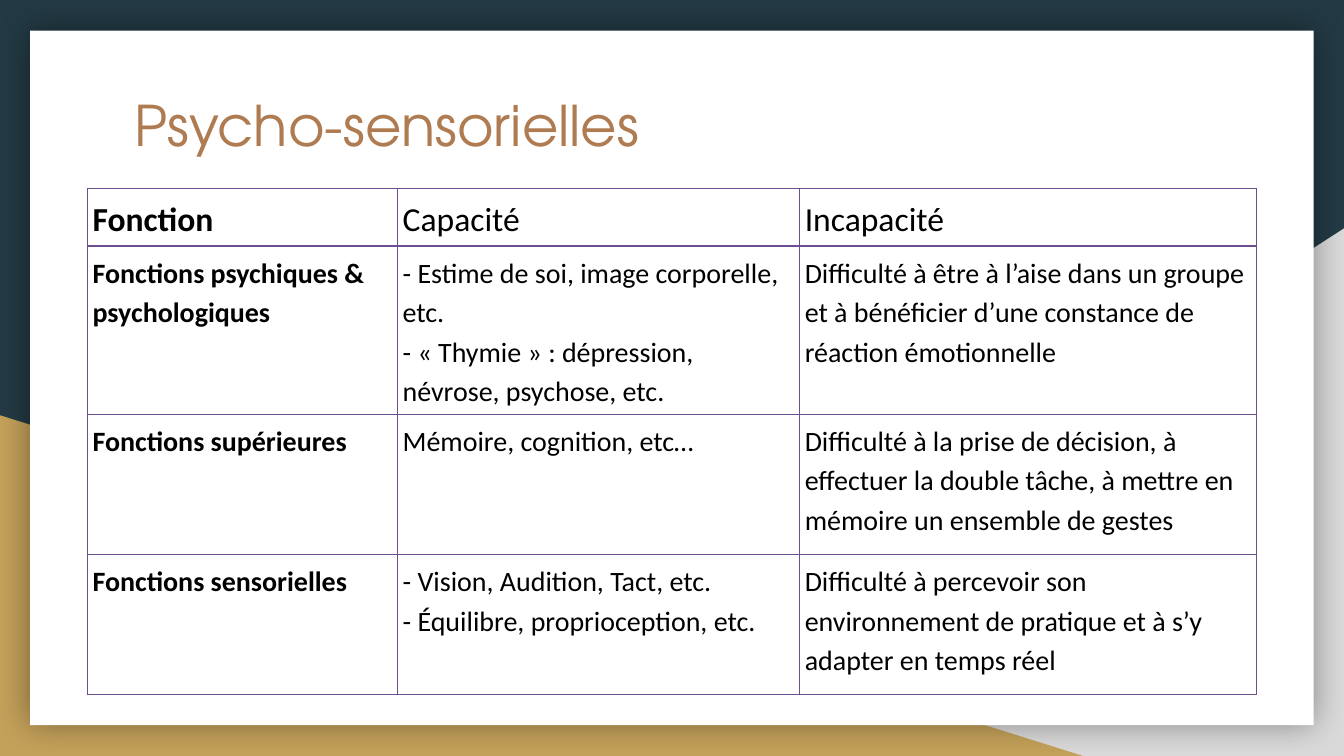
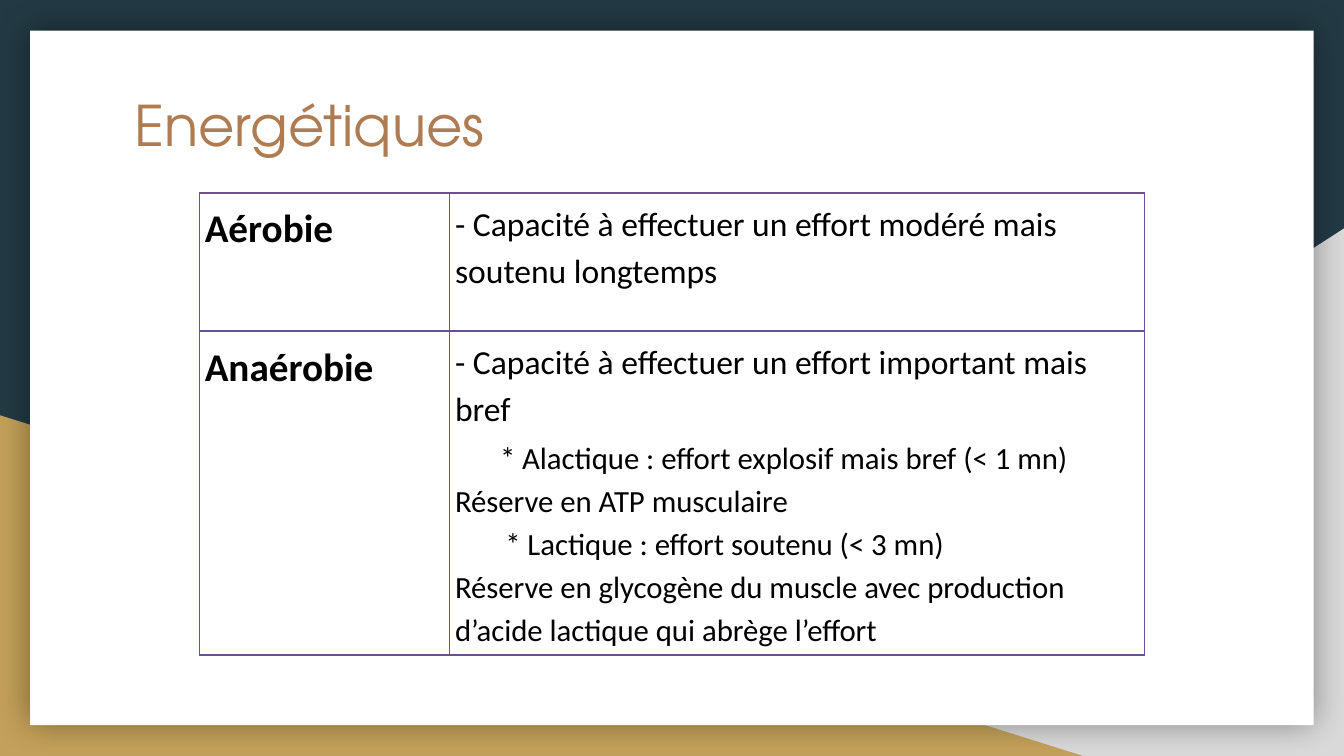
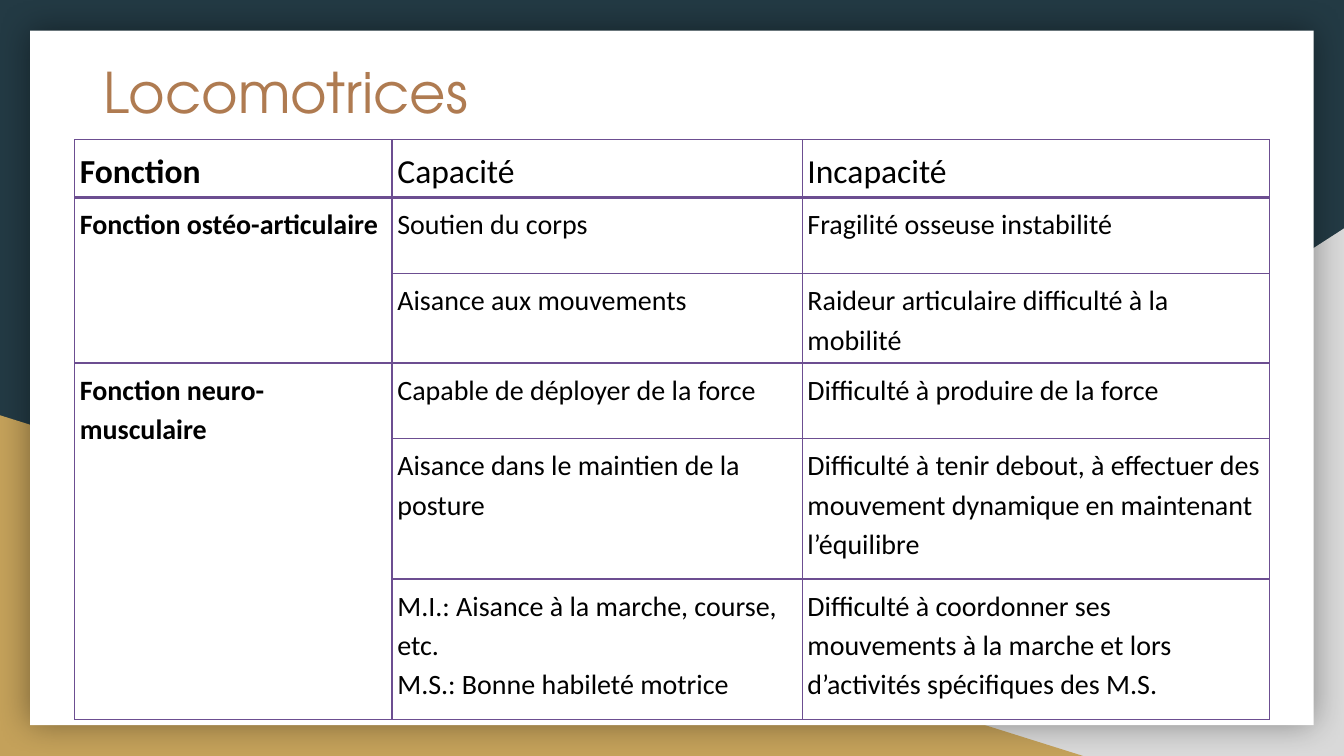
import lxml.etree
import pptx
import pptx.dml.color
import pptx.enum.shapes
import pptx.enum.text
import pptx.oxml
import pptx.oxml.ns
import pptx.util
from pptx.util import Cm

COLORS = {
    "night": "233A44",
    "grey": "D9D9D9",
    "gold": "C4A15A",
    "card": "FFFFFF",
    "title": "AF7B51",
    "text": "000000",
    "border": "6C4E91",
}
TITLE_FONT = "TeX Gyre Adventor"
BODY_FONT = "Calibri"
HEADINGS = [["Fonction"], ["Capacité"], ["Incapacité"]]

# A line of a cell is a text, or a text with its own format.
TOPICS = [
    {
        "title": "Psycho-sensorielles",
        "title_at": (2.29, 1.47),
        "table_at": (1.65, 3.56),
        "columns": (5.86, 7.6, 8.64),
        "heights": (1, 2.66, 2.65, 2.65),
        "size": 15,
        "merges": [],
        "rows": [
            HEADINGS,
            [
                ["Fonctions psychiques & psychologiques"],
                ["- Estime de soi, image corporelle, etc.",
                 "- « Thymie » : dépression, névrose, psychose, etc."],
                ["Difficulté à être à l’aise dans un groupe et à bénéficier "
                 "d’une constance de réaction émotionnelle"],
            ],
            [
                ["Fonctions supérieures"],
                ["Mémoire, cognition, etc…"],
                ["Difficulté à la prise de décision, à effectuer la double "
                 "tâche, à mettre en mémoire un ensemble de gestes"],
            ],
            [
                ["Fonctions sensorielles"],
                ["- Vision, Audition, Tact, etc.",
                 "- Équilibre, proprioception, etc."],
                ["Difficulté à percevoir son environnement de pratique et à "
                 "s’y adapter en temps réel"],
            ],
        ],
    },
    {
        "title": "Energétiques",
        "title_at": (2.29, 1.47),
        "table_at": (3.77, 3.65),
        "columns": (4.73, 13.13),
        "heights": (2.61, 5.21),
        "size": 18,
        "merges": [],
        "rows": [
            [
                [("Aérobie", {"size": 21})],
                ["- Capacité à effectuer un effort modéré mais soutenu longtemps"],
            ],
            [
                [("Anaérobie", {"size": 21})],
                [
                    "- Capacité à effectuer un effort important mais bref",
                    ("* Alactique : effort explosif mais bref (< 1 mn)",
                     {"size": 16.5, "indent": 0.85, "before": 2}),
                    ("Réserve en ATP musculaire", {"size": 16.5}),
                    ("* Lactique : effort soutenu (< 3 mn)",
                     {"size": 16.5, "indent": 0.95}),
                    ("Réserve en glycogène du muscle avec production d’acide "
                     "lactique qui abrège l’effort", {"size": 16.5}),
                ],
            ],
        ],
    },
    {
        "title": "Locomotrices",
        "title_at": (1.7, 0.84),
        "table_at": (1.41, 2.64),
        "columns": (6, 7.75, 8.83),
        "heights": (1, 1.44, 1.43, 1.43, 2.65, 2.65),
        "size": 15,
        "merges": [(1, 2), (3, 5)],
        "rows": [
            HEADINGS,
            [["Fonction ostéo-articulaire"], ["Soutien du corps"],
             ["Fragilité osseuse instabilité"]],
            [[], ["Aisance aux mouvements"],
             ["Raideur articulaire difficulté à la mobilité"]],
            [["Fonction neuro-musculaire"], ["Capable de déployer de la force"],
             ["Difficulté à produire de la force"]],
            [
                [],
                ["Aisance dans le maintien de la posture"],
                ["Difficulté à tenir debout, à effectuer des mouvement "
                 "dynamique en maintenant l’équilibre"],
            ],
            [
                [],
                ["M.I.: Aisance à la marche, course, etc.",
                 "M.S.: Bonne habileté motrice"],
                ["Difficulté à coordonner ses mouvements à la marche et lors "
                 "d’activités spécifiques des M.S."],
            ],
        ],
    },
]


def write(paragraph, text, size=15, bold=False, font=BODY_FONT, color="text",
          spacing=1.15, indent=0, before=0):
    paragraph.alignment = pptx.enum.text.PP_ALIGN.LEFT
    paragraph.line_spacing = spacing
    paragraph.space_before = pptx.util.Pt(before)
    if indent:
        paragraph._p.get_or_add_pPr().set("marL", str(Cm(indent)))
    run = paragraph.add_run()
    run.text = text
    run.font.size = pptx.util.Pt(size)
    run.font.bold = bold
    run.font.name = font
    run.font.color.rgb = pptx.dml.color.RGBColor.from_string(COLORS[color])


def draw_borders(cell, widths):
    """Line the left, right, top and bottom edges, with widths in points."""
    properties = cell._tc.get_or_add_tcPr()
    for position, (edge, width) in enumerate(zip("LRTB", widths)):
        line = pptx.oxml.parse_xml(
            f'<a:ln{edge} {pptx.oxml.ns.nsdecls("a")} w="{pptx.util.Pt(width)}">'
            f'<a:solidFill><a:srgbClr val="{COLORS["border"]}"/></a:solidFill>'
            f'</a:ln{edge}>')
        properties.insert(position, line)


presentation = pptx.Presentation()
presentation.slide_width = Cm(25.4)
presentation.slide_height = Cm(14.29)

# Shared backdrop, kept in the layout
layout = presentation.slide_layouts.get_by_name("Title Only")
layout.background.fill.solid()
layout.background.fill.fore_color.rgb = pptx.dml.color.RGBColor.from_string(COLORS["night"])
for placeholder in list(layout.placeholders)[1:]:
    layout.shapes.element.remove(placeholder.element)

slides = [presentation.slides.add_slide(layout) for topic in TOPICS]

TRIANGLE = pptx.enum.shapes.MSO_SHAPE.RIGHT_TRIANGLE
RECTANGLE = pptx.enum.shapes.MSO_SHAPE.RECTANGLE
backdrop = [
    ("grey", TRIANGLE, (9.96, 4.32, 15.44, 9.97)),
    ("gold", TRIANGLE, (0, 7.85, 20.47, 6.44)),
    ("card", RECTANGLE, (0.57, 0.58, 24.26, 13.13)),
]
for depth, (color, preset, box) in enumerate(backdrop):
    part = slides[0].shapes.add_shape(preset, *map(Cm, box))
    part.shadow.inherit = False
    part.fill.solid()
    part.fill.fore_color.rgb = pptx.dml.color.RGBColor.from_string(COLORS[color])
    part.line.fill.background()
    properties = part.element.spPr
    if color == "grey":
        properties.xfrm.set("flipH", "1")
    if color == "card":
        effects = properties.find(pptx.oxml.ns.qn("a:effectLst"))
        shadow = lxml.etree.SubElement(
            effects, pptx.oxml.ns.qn("a:outerShdw"),
            blurRad=str(pptx.util.Pt(18)), dist="0", dir="0", rotWithShape="0")
        black = lxml.etree.SubElement(shadow, pptx.oxml.ns.qn("a:srgbClr"), val="000000")
        lxml.etree.SubElement(black, pptx.oxml.ns.qn("a:alpha"), val="40000")
    layout.shapes.element.insert(2 + depth, part.element)

for slide, topic in zip(slides, TOPICS):
    title = slide.shapes.title
    title.left, title.top = map(Cm, topic["title_at"])
    title.width, title.height = Cm(20.86), Cm(2.64)
    heading = title.text_frame
    heading.auto_size = pptx.enum.text.MSO_AUTO_SIZE.NONE
    heading.vertical_anchor = pptx.enum.text.MSO_ANCHOR.TOP
    heading.margin_left = heading.margin_right = Cm(0.25)
    heading.margin_top = heading.margin_bottom = Cm(0.25)
    write(heading.paragraphs[0], topic["title"], size=30, font=TITLE_FONT,
          color="title", spacing=1)

    columns, heights = topic["columns"], topic["heights"]
    functions = slide.shapes.add_table(
        len(heights), len(columns), *map(Cm, topic["table_at"]),
        Cm(sum(columns)), Cm(sum(heights))).table
    functions.first_row = functions.horz_banding = False
    for column, width in zip(functions.columns, columns):
        column.width = Cm(width)
    for row, height in zip(functions.rows, heights):
        row.height = Cm(height)

    for r, row in enumerate(topic["rows"]):
        for c, lines in enumerate(row):
            cell = functions.cell(r, c)
            cell.margin_left = cell.margin_right = Cm(0.1)
            cell.margin_top = cell.margin_bottom = Cm(0.1)
            cell.fill.background()
            # The rule under the first row is thicker.
            draw_borders(cell, (0.75, 0.75, 1.5 if r == 1 else 0.75,
                                1.5 if r == 0 else 0.75))
            for n, line in enumerate(lines):
                text, own = line if isinstance(line, tuple) else (line, {})
                frame = cell.text_frame
                paragraph = frame.add_paragraph() if n else frame.paragraphs[0]
                size = 18 if r == 0 else topic["size"]
                write(paragraph, text, **{"size": size, "bold": c == 0, **own})

    for first, last in topic["merges"]:
        functions.cell(first, 0).merge(functions.cell(last, 0))

presentation.save("out.pptx")
